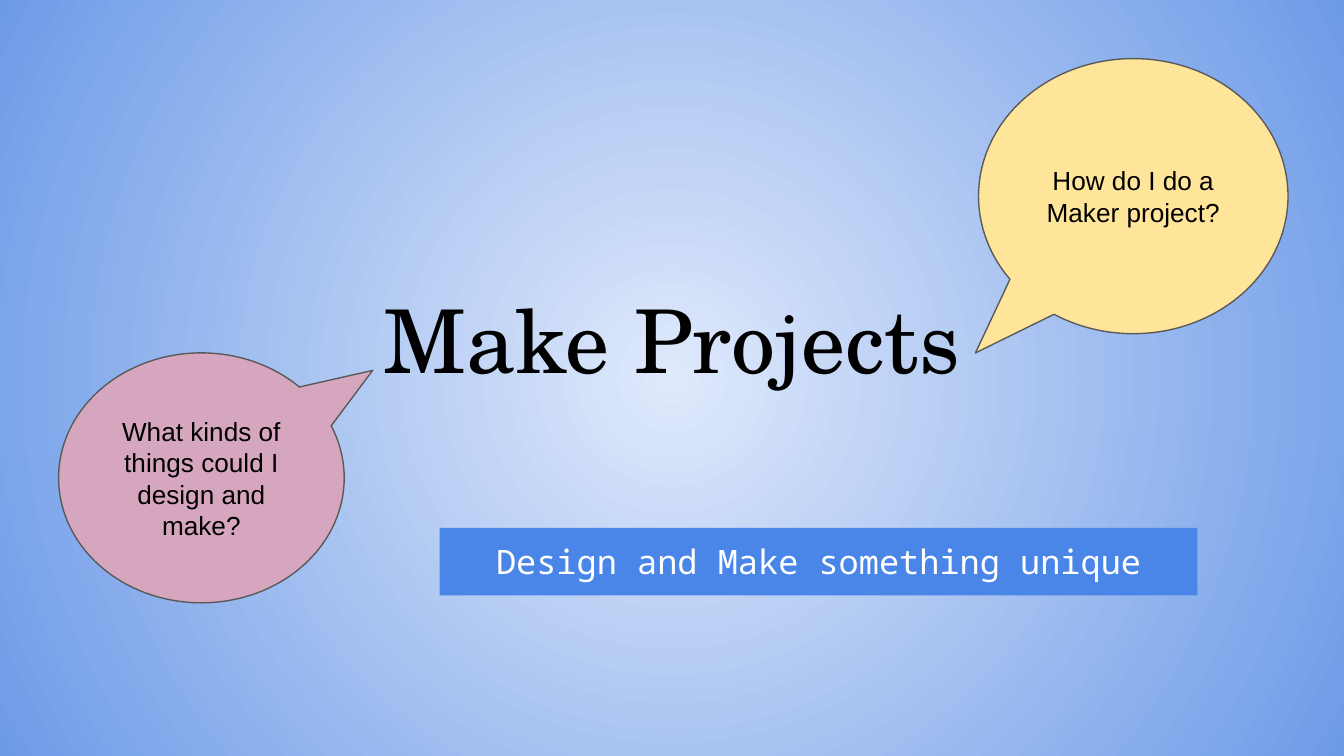
from dataclasses import dataclass

from lxml import etree
from pptx import Presentation
from pptx import util as u
from pptx.dml import color
from pptx.enum import shapes, text
from pptx.oxml import ns
from pptx.shapes.autoshape import Shape
from pptx.slide import Slide


@dataclass(frozen=True)
class Theme:
    glow: str = "DFE9FB"
    edge: str = "6E9BE7"
    ink: str = "000000"
    outline: str = "595959"
    yellow: str = "FFE599"
    pink: str = "D5A6BD"
    banner: str = "4A86E8"
    banner_ink: str = "FFFFFF"
    title_font: str = "TeX Gyre Schola"
    question_font: str = "Arial"
    banner_font: str = "Noto Sans Mono"
    title_size: float = 47.1
    question_size: float = 14
    banner_size: float = 18
    outline_width: float = 0.75
    inset: float = 7.2


@dataclass(frozen=True)
class Box:
    left: float
    top: float
    width: float
    height: float

    def lengths(self) -> tuple[u.Length, ...]:
        return tuple(u.Pt(v) for v in (self.left, self.top, self.width, self.height))


@dataclass(frozen=True)
class Question:
    wording: str
    box: Box
    fill: str
    tail: tuple[float, float]


THEME = Theme()
QUESTIONS = (
    Question("How do I do a Maker project?",
             Box(524.2, 31.4, 165.8, 147.4), THEME.yellow, (-0.51, 0.57)),
    Question("What kinds of things could I design and make?",
             Box(31.4, 189.1, 153, 133.9), THEME.pink, (0.6, -0.43)),
)


def paint_background(slide: Slide) -> None:
    fill = slide.background.fill
    fill.gradient()
    for stop, shade in zip(fill.gradient_stops, (THEME.glow, THEME.edge)):
        stop.color.rgb = color.RGBColor.from_string(shade)
    gradient = slide.element.find(".//" + ns.qn("a:gradFill"))
    gradient.remove(gradient.find(ns.qn("a:lin")))
    circle = etree.SubElement(gradient, ns.qn("a:path"), path="circle")
    etree.SubElement(circle, ns.qn("a:fillToRect"),
                     {side: "50000" for side in "ltrb"})


def write(shape: Shape, wording: str, font_name: str, size: float, ink: str,
          anchor: text.MSO_ANCHOR = text.MSO_ANCHOR.MIDDLE) -> None:
    frame = shape.text_frame
    frame.text = wording
    frame.word_wrap = True
    frame.vertical_anchor = anchor
    frame.margin_left = frame.margin_right = u.Pt(THEME.inset)
    frame.margin_top = frame.margin_bottom = u.Pt(THEME.inset)
    paragraph = frame.paragraphs[0]
    paragraph.alignment = text.PP_ALIGN.CENTER
    font = paragraph.runs[0].font
    font.name = font_name
    font.size = u.Pt(size)
    font.color.rgb = color.RGBColor.from_string(ink)


def add_filled(slide: Slide, kind: shapes.MSO_SHAPE, box: Box, fill: str) -> Shape:
    shape = slide.shapes.add_shape(kind, *box.lengths())
    shape.shadow.inherit = False
    shape.fill.solid()
    shape.fill.fore_color.rgb = color.RGBColor.from_string(fill)
    return shape


def add_title(slide: Slide) -> None:
    title = slide.shapes.add_textbox(*Box(24.5, 135.4, 671, 92).lengths())
    write(title, "Make Projects", THEME.title_font, THEME.title_size, THEME.ink)


def add_question(slide: Slide, question: Question) -> None:
    bubble = add_filled(slide, shapes.MSO_SHAPE.OVAL_CALLOUT, question.box, question.fill)
    bubble.adjustments[0], bubble.adjustments[1] = question.tail
    bubble.line.color.rgb = color.RGBColor.from_string(THEME.outline)
    bubble.line.width = u.Pt(THEME.outline_width)
    write(bubble, question.wording, THEME.question_font, THEME.question_size, THEME.ink)


def add_banner(slide: Slide) -> None:
    banner = add_filled(slide, shapes.MSO_SHAPE.RECTANGLE,
                        Box(235.5, 282.8, 406, 36.2), THEME.banner)
    banner.line.fill.background()
    write(banner, "Design and Make something unique", THEME.banner_font,
          THEME.banner_size, THEME.banner_ink, text.MSO_ANCHOR.TOP)
    banner.text_frame.auto_size = text.MSO_AUTO_SIZE.SHAPE_TO_FIT_TEXT


def main() -> None:
    deck = Presentation()
    deck.slide_width, deck.slide_height = u.Pt(720), u.Pt(405)
    slide = deck.slides.add_slide(deck.slide_layouts[6])
    paint_background(slide)
    add_title(slide)
    for question in QUESTIONS:
        add_question(slide, question)
    add_banner(slide)
    deck.save("out.pptx")


if __name__ == "__main__":
    main()
